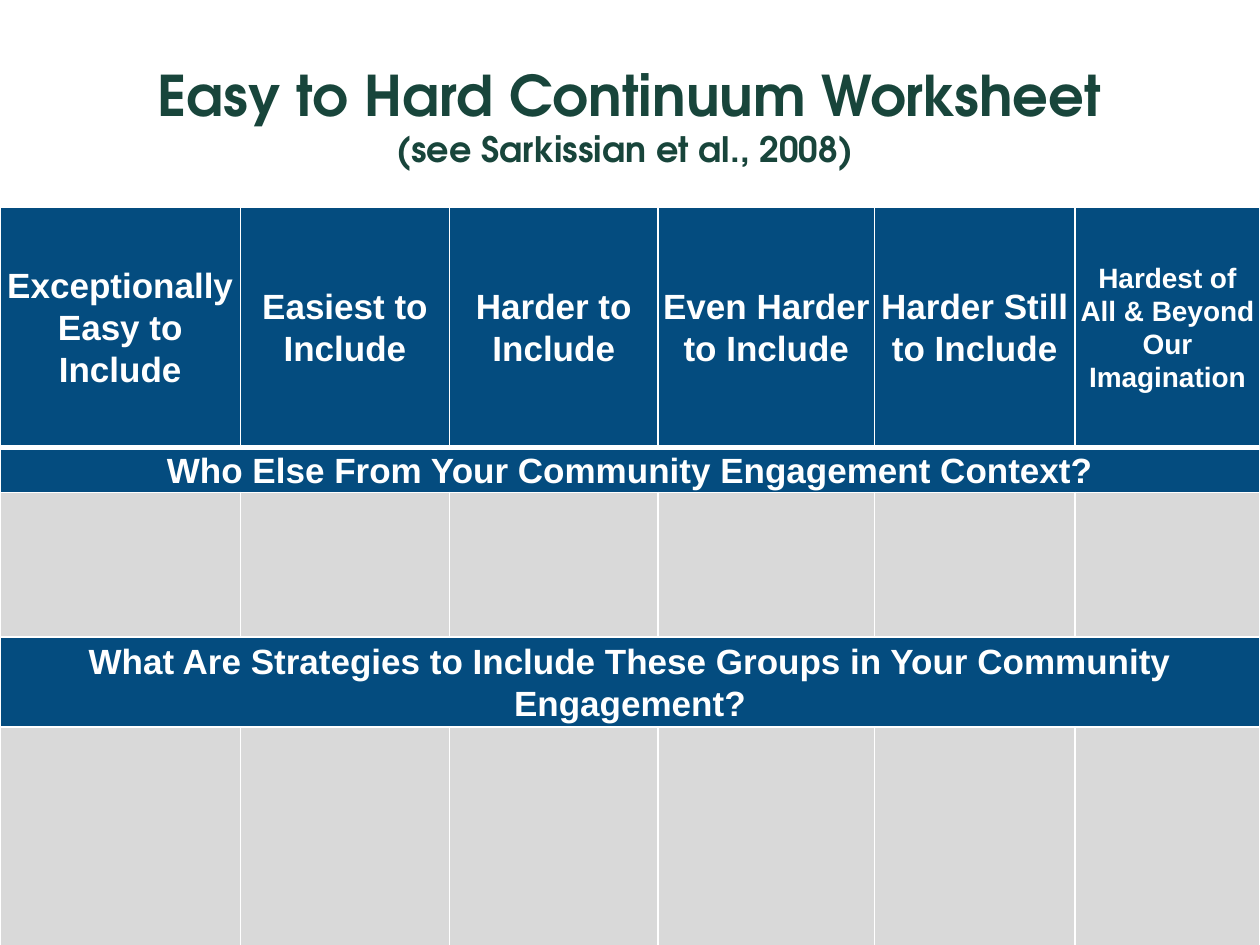
from lxml.etree import SubElement as Sub
from pptx import Presentation
from pptx.dml.color import RGBColor as RGB
from pptx.enum.text import MSO_ANCHOR as Anchor, PP_ALIGN as Align
from pptx.oxml.ns import qn
from pptx.util import Cm, Pt

# Content
TITLE = "Easy to Hard Continuum Worksheet"
SOURCE = "(see Sarkissian et al., 2008) "
HEADS = [
    ("Exceptionally Easy to Include", 20),
    ("Easiest to Include", 20),
    ("Harder to Include", 20),
    ("Even Harder to Include", 20),
    ("Harder Still to Include", 20),
    ("Hardest of All & Beyond Our Imagination", 16),
]
BANDS = {
    1: "Who Else From Your Community Engagement Context?",
    3: "What Are Strategies to Include These Groups in Your Community Engagement?",
}

# Look, with lengths in cm
WIDTHS = [4.85, 4.21, 4.21, 4.36, 4.04, 3.73]
HEIGHTS = [4.85, 0.76, 2.92, 1.57, 4.47]
GREEN = RGB(0x18, 0x45, 0x3B)
BLUE = RGB(0x04, 0x4C, 0x7F)
GREY = RGB(0xD9, 0xD9, 0xD9)
WHITE = RGB(0xFF, 0xFF, 0xFF)


def add_run(para, text, size, face, color):
    run = para.add_run()
    run.text = text
    font = run.font
    font.name, font.size, font.bold = face, Pt(size), True
    font.color.rgb = color


def add_edges(cell, top, bottom):
    props = cell._tc.get_or_add_tcPr()
    for side, width in (("L", 1), ("R", 1), ("T", top), ("B", bottom)):
        line = Sub(props, qn(f"a:ln{side}"), w=str(Pt(width)))
        fill = Sub(line, qn("a:solidFill"))
        Sub(fill, qn("a:srgbClr"), val=str(WHITE))


def add_label(cell, text, size):
    cell.vertical_anchor = Anchor.MIDDLE
    cell.margin_left = cell.margin_right = Cm(0.08)
    cell.margin_top = cell.margin_bottom = 0
    para = cell.text_frame.paragraphs[0]
    para.alignment, para.line_spacing = Align.CENTER, 1.07
    add_run(para, text, size, "Arial", WHITE)


deck = Presentation()
deck.slide_width, deck.slide_height = Cm(25.4), Cm(19.05)
slide = deck.slides.add_slide(deck.slide_layouts[6])

# Title
box = slide.shapes.add_textbox(Cm(1.27), Cm(1.47), Cm(22.86), Cm(1.7))
frame = box.text_frame
frame.word_wrap, frame.vertical_anchor = True, Anchor.MIDDLE
para = frame.paragraphs[0]
para.alignment = Align.CENTER
add_run(para, TITLE, 32, "TeX Gyre Adventor", GREEN)
para.add_line_break()
add_run(para, SOURCE, 20, "TeX Gyre Adventor", GREEN)

# Worksheet grid
table = slide.shapes.add_table(
    len(HEIGHTS), len(WIDTHS), 0, Cm(4.17), Cm(sum(WIDTHS)), Cm(sum(HEIGHTS))
).table
table.first_row = table.horz_banding = False
for col, width in zip(table.columns, WIDTHS):
    col.width = Cm(width)
for r, height in enumerate(HEIGHTS):
    table.rows[r].height = Cm(height)
    for cell in table.rows[r].cells:
        add_edges(cell, 3 if r == 1 else 1, 3 if r == 0 else 1)
        cell.fill.solid()
        cell.fill.fore_color.rgb = BLUE if r == 0 or r in BANDS else GREY

# Headings and full-width bands
for c, (text, size) in enumerate(HEADS):
    add_label(table.cell(0, c), text, size)
for r, text in BANDS.items():
    table.cell(r, 0).merge(table.cell(r, len(WIDTHS) - 1))
    add_label(table.cell(r, 0), text, 20)

deck.save("out.pptx")
